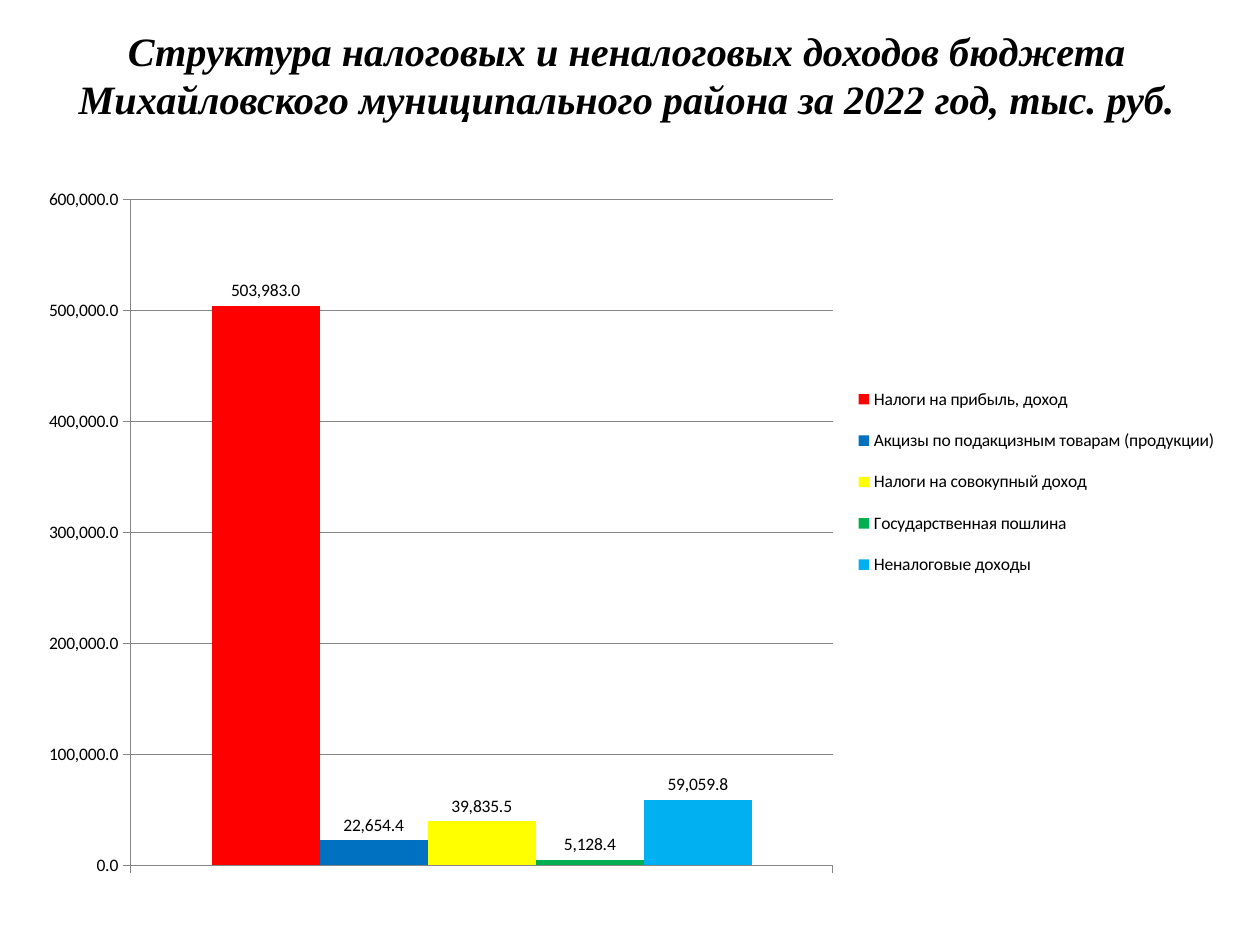
from lxml import etree
from pptx import Presentation
from pptx.chart.data import CategoryChartData
from pptx.dml.color import RGBColor
from pptx.enum.chart import (XL_CHART_TYPE, XL_LABEL_POSITION, XL_LEGEND_POSITION,
                             XL_TICK_LABEL_POSITION, XL_TICK_MARK)
from pptx.enum.text import MSO_ANCHOR, PP_ALIGN
from pptx.oxml.ns import qn
from pptx.util import Pt

# Content
TITLE = ("Структура налоговых и неналоговых доходов бюджета "
         "Михайловского муниципального района за 2022 год, тыс. руб.")
INCOME = [
    ("Налоги на прибыль, доход", 503983, "red"),
    ("Акцизы по подакцизным товарам (продукции)", 22654.4, "blue"),
    ("Налоги на совокупный доход", 39835.5, "yellow"),
    ("Государственная пошлина", 5128.4, "green"),
    ("Неналоговые доходы", 59059.8, "sky"),
]

# Format
COLORS = {"red": "FF0000", "blue": "0070C0", "yellow": "FFFF00", "green": "00B050",
          "sky": "00B0F0", "text": "000000", "line": "868686"}
TITLE_FONT = {"name": "Times New Roman", "size": Pt(23), "bold": True, "italic": True}
CHART_FONT = {"name": "Calibri", "size": Pt(10), "bold": False}
TITLE_BOX = {"left": Pt(-1.5), "top": Pt(0), "width": Pt(720), "height": Pt(85)}
CHART_BOX = (Pt(14.4), Pt(100), Pt(692), Pt(408))
NUMBER_FORMAT = "#,##0.0"
# Shares of the chart area
PLOT_LAYOUT = {"x": 0.087, "y": 0.034, "w": 0.58, "h": 0.933}
LEGEND_LAYOUT = {"x": 0.68, "y": 0.27, "w": 0.31, "h": 0.32}


def color(name):
    return RGBColor.from_string(COLORS[name])


def set_all(target, values):
    for name, value in values.items():
        setattr(target, name, value)


def format_font(font, values):
    set_all(font, values)
    font.color.rgb = color("text")


def format_line(line):
    line.color.rgb = color("line")
    line.width = Pt(0.75)


def place(parent, shares, inner=False):
    """Give a chart part a fixed place within the chart area."""
    layout = parent.find(qn("c:layout"))
    if layout is None:
        layout = etree.Element(qn("c:layout"))
        before = parent.find(qn("c:legendPos"))
        if before is None:
            parent.insert(0, layout)
        else:
            before.addnext(layout)
    manual = etree.SubElement(layout, qn("c:manualLayout"))
    settings = {"layoutTarget": "inner"} if inner else {}
    settings |= {"xMode": "edge", "yMode": "edge"} | shares
    for name, value in settings.items():
        etree.SubElement(manual, qn(f"c:{name}")).set("val", str(value))


presentation = Presentation()
presentation.slide_width, presentation.slide_height = Pt(720), Pt(540)
slide = presentation.slides.add_slide(presentation.slide_layouts[5])

# Title
title = slide.shapes.title
set_all(title, TITLE_BOX)
set_all(title.text_frame, {"text": TITLE, "word_wrap": True,
                           "vertical_anchor": MSO_ANCHOR.MIDDLE})
paragraph = title.text_frame.paragraphs[0]
paragraph.alignment = PP_ALIGN.CENTER
format_font(paragraph.runs[0].font, TITLE_FONT)

# Chart
data = CategoryChartData(number_format=NUMBER_FORMAT)
data.categories = ["1"]
for name, value, _ in INCOME:
    data.add_series(name, [value])
chart = slide.shapes.add_chart(XL_CHART_TYPE.COLUMN_CLUSTERED, *CHART_BOX, data).chart
set_all(chart, {"has_title": False, "has_legend": True})
format_font(chart.font, CHART_FONT)

# Columns and their values
plot = chart.plots[0]
set_all(plot, {"gap_width": 150, "overlap": 0, "vary_by_categories": False})
for series, (_, _, fill) in zip(plot.series, INCOME):
    series.format.fill.solid()
    series.format.fill.fore_color.rgb = color(fill)
    set_all(series.data_labels, {
        "show_value": True, "number_format": NUMBER_FORMAT,
        "number_format_is_linked": False, "position": XL_LABEL_POSITION.OUTSIDE_END})

# Axes
for axis in (chart.category_axis, chart.value_axis):
    set_all(axis, {"major_tick_mark": XL_TICK_MARK.OUTSIDE,
                   "minor_tick_mark": XL_TICK_MARK.NONE})
    format_line(axis.format.line)
chart.category_axis.tick_label_position = XL_TICK_LABEL_POSITION.NONE
set_all(chart.value_axis, {"minimum_scale": 0, "maximum_scale": 600000,
                           "major_unit": 100000, "has_major_gridlines": True})
set_all(chart.value_axis.tick_labels, {"number_format": NUMBER_FORMAT,
                                       "number_format_is_linked": False})
format_line(chart.value_axis.major_gridlines.format.line)

# Legend and layout
set_all(chart.legend, {"position": XL_LEGEND_POSITION.RIGHT, "include_in_layout": False})
chart_space = chart.element
place(chart_space.find(f".//{qn('c:plotArea')}"), PLOT_LAYOUT, inner=True)
place(chart_space.find(f".//{qn('c:legend')}"), LEGEND_LAYOUT)

presentation.save("out.pptx")
